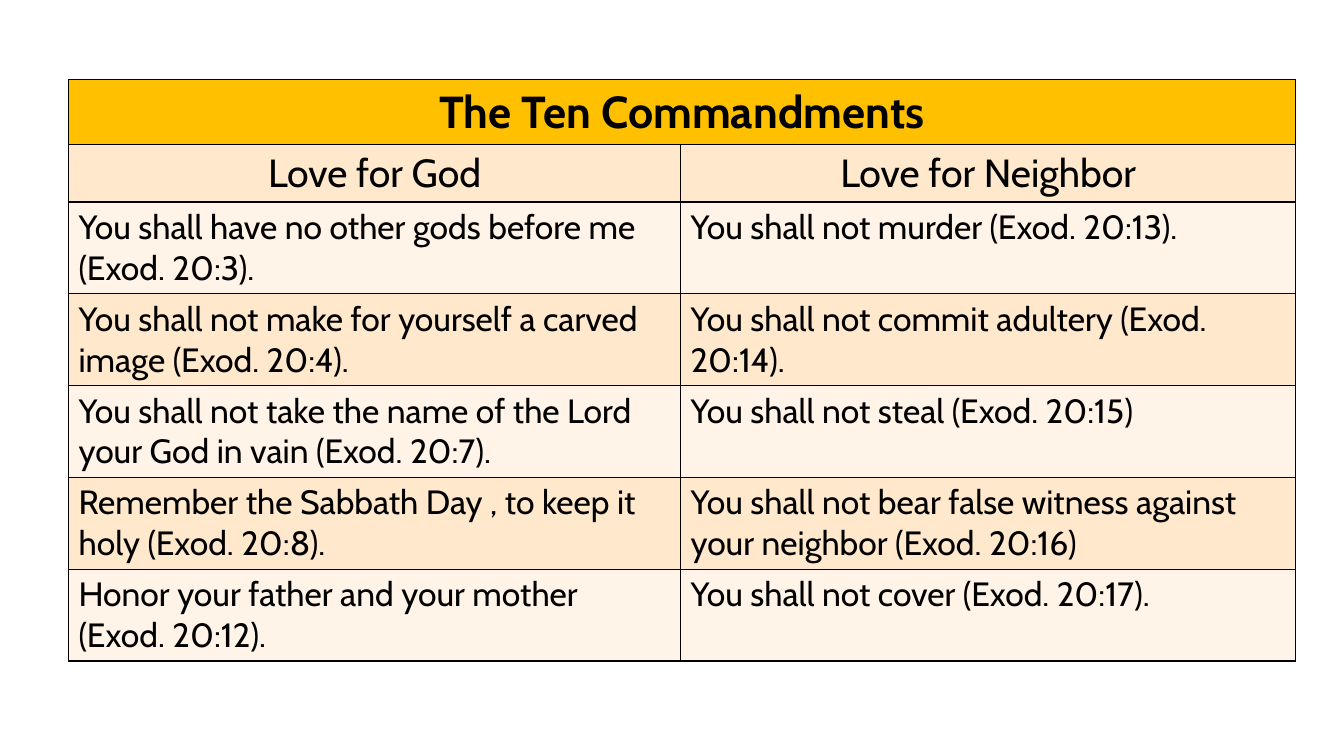
from dataclasses import dataclass

from lxml.etree import SubElement
from pptx import Presentation
from pptx.dml.color import RGBColor
from pptx.enum.text import PP_ALIGN
from pptx.oxml.ns import qn
from pptx.table import _Cell
from pptx.util import Inches, Pt

FONT = "Cabin"
BLACK = "000000"
GOLD, PEACH, CREAM = "FFC000", "FFE8CC", "FFF4E7"
COLUMN_WIDTHS = (6.07, 6.1)


@dataclass(frozen=True)
class RowStyle:
    height: float
    size: int
    fill: str
    align: PP_ALIGN = PP_ALIGN.LEFT
    bold: bool = False


TITLE = RowStyle(0.64, 32, GOLD, PP_ALIGN.CENTER, True)
HEADING = RowStyle(0.57, 28, PEACH, PP_ALIGN.CENTER)
BODY = (RowStyle(0.91, 24, CREAM), RowStyle(0.91, 24, PEACH))

COMMANDMENTS = [
    ("You shall have no other gods before me (Exod. 20:3).",
     "You shall not murder (Exod. 20:13)."),
    ("You shall not make for yourself a carved image (Exod. 20:4).",
     "You shall not commit adultery (Exod. 20:14)."),
    ("You shall not take the name of the Lord your God in vain (Exod. 20:7).",
     "You shall not steal (Exod. 20:15)"),
    ("Remember the Sabbath Day , to keep it holy (Exod. 20:8).",
     "You shall not bear false witness against your neighbor (Exod. 20:16)"),
    ("Honor your father and your mother (Exod. 20:12).",
     "You shall not cover (Exod. 20:17)."),
]


def rgb(value: str) -> RGBColor:
    return RGBColor.from_string(value)


def add_borders(cell: _Cell) -> None:
    tc_pr = cell._tc.get_or_add_tcPr()
    for side in ("a:lnL", "a:lnR", "a:lnT", "a:lnB"):
        line = SubElement(tc_pr, qn(side), w=str(Pt(1)))
        SubElement(SubElement(line, qn("a:solidFill")), qn("a:srgbClr"), val=BLACK)


def draw_cell(cell: _Cell, text: str, style: RowStyle) -> None:
    # Borders come before the fill in the cell properties
    add_borders(cell)
    cell.fill.solid()
    cell.fill.fore_color.rgb = rgb(style.fill)
    p = cell.text_frame.paragraphs[0]
    p.text = text
    p.alignment = style.align
    for font in (p.font, *(r.font for r in p.runs)):
        font.name = FONT
        font.size = Pt(style.size)
        font.bold = style.bold
        font.color.rgb = rgb(BLACK)


def main() -> None:
    prs = Presentation()
    prs.slide_width, prs.slide_height = Inches(13.33), Inches(7.5)
    s = prs.slides.add_slide(prs.slide_layouts[6])

    # Rows: title, headings, then banded commandments
    rows = [(TITLE, ("The Ten Commandments", "")),
            (HEADING, ("Love for God", "Love for Neighbor"))]
    rows += [(BODY[i % 2], pair) for i, pair in enumerate(COMMANDMENTS)]

    # Table frame
    height = sum(style.height for style, _ in rows)
    table = s.shapes.add_table(len(rows), len(COLUMN_WIDTHS), Inches(0.68), Inches(0.79),
                               Inches(sum(COLUMN_WIDTHS)), Inches(height)).table
    for column, width in zip(table.columns, COLUMN_WIDTHS):
        column.width = Inches(width)
    table.cell(0, 0).merge(table.cell(0, 1))

    # Cells
    for row, (style, texts) in zip(table.rows, rows):
        row.height = Inches(style.height)
        for cell, text in zip(row.cells, texts):
            draw_cell(cell, text, style)

    prs.save("out.pptx")


if __name__ == "__main__":
    main()
